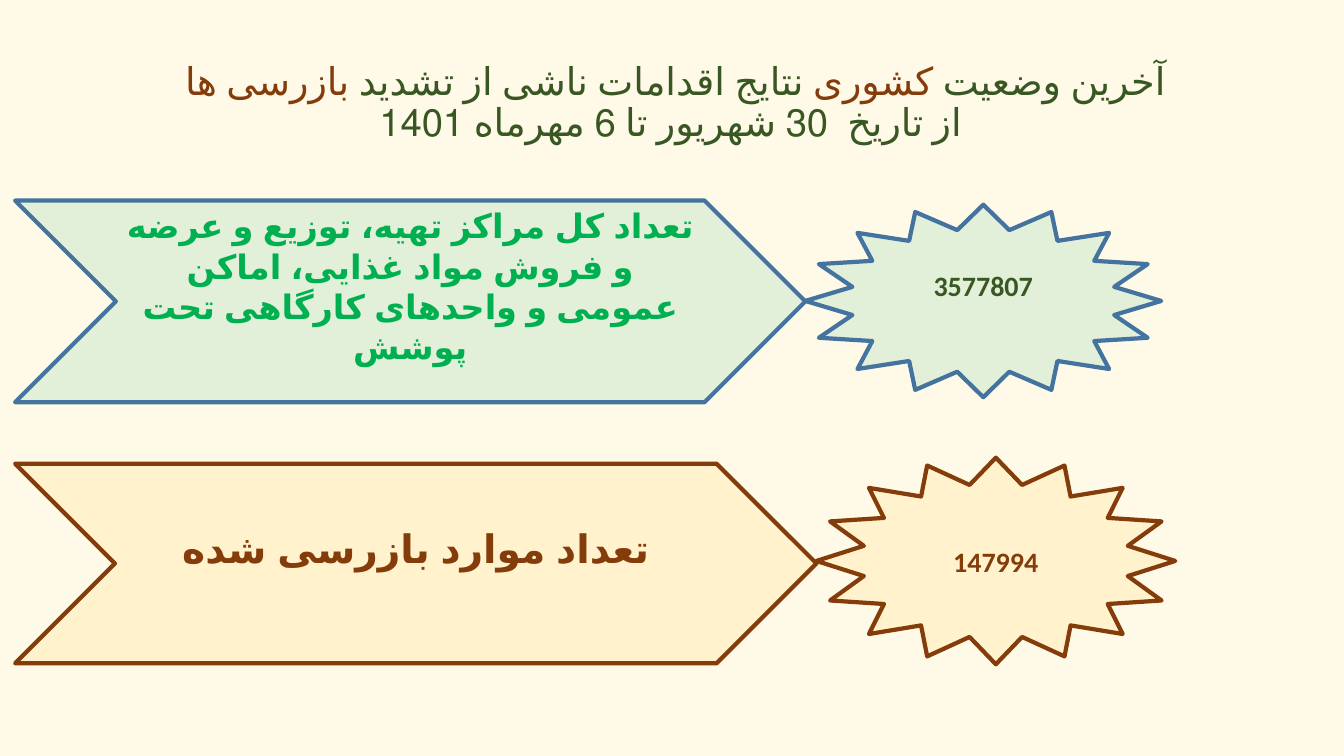
"""Build a slide with two inspection totals, each a chevron leading to a star."""
from pptx import Presentation
from pptx.dml.color import RGBColor
from pptx.enum import lang, shapes, text
from pptx.util import Pt

CREAM = RGBColor(0xFF, 0xF9, 0xE7)
PALE_GREEN = RGBColor(0xE2, 0xF0, 0xD9)
PALE_YELLOW = RGBColor(0xFF, 0xF2, 0xCC)
BLUE = RGBColor(0x43, 0x73, 0x9E)
GREEN = RGBColor(0x00, 0xB0, 0x50)
DARK_GREEN = RGBColor(0x38, 0x57, 0x23)
BROWN = RGBColor(0x84, 0x3C, 0x0B)

TITLE_LINES = [
    [("آخرین وضعیت ", DARK_GREEN), ("کشوری", BROWN),
     (" نتایج اقدامات ناشی از تشدید ", DARK_GREEN), ("بازرسی ها", BROWN)],
    [(" از تاریخ  30 شهریور تا 6 مهرماه 1401", DARK_GREEN)],
]
TITLE_BOX = (36.7, 41, 891.4, 81.4)
LEFT = 10.8
INSET, RAISED = 3.6, 25.6

ROWS = [
    {"fill": PALE_GREEN, "line": BLUE,
     "label": "تعداد کل مراکز تهیه، توزیع و عرضه و فروش مواد غذایی، اماکن عمومی و واحدهای کارگاهی تحت پوشش",
     "label_font": (24, GREEN), "label_box": (143.3, 564.5, 144), "label_bottom": RAISED,
     "total": "3577807", "total_font": (20, DARK_GREEN),
     "total_box": (146.2, 254.2, 137.5), "total_bottom": RAISED},
    {"fill": PALE_YELLOW, "line": BROWN,
     "label": "تعداد موارد بازرسی شده",
     "label_font": (28, BROWN), "label_box": (331.2, 572.4, 142.6), "label_bottom": RAISED,
     "total": "147994", "total_font": (20, BROWN),
     "total_box": (326.9, 256.3, 147.6), "total_bottom": INSET},
]


def format_font(font, size, color, bold):
    """Apply the slide's font and language with a size, colour and weight."""
    settings = {"name": "Calibri", "size": Pt(size), "bold": bold,
                "language_id": lang.MSO_LANGUAGE_ID.FARSI}
    for name, value in settings.items():
        setattr(font, name, value)
    font.color.rgb = color


def add_title(slide):
    """Fill the title placeholder with its coloured lines."""
    title = slide.shapes.title
    for name, value in zip(("left", "top", "width", "height"), TITLE_BOX):
        setattr(title, name, Pt(value))
    frame = title.text_frame
    settings = {"word_wrap": True, "auto_size": text.MSO_AUTO_SIZE.NONE,
                "vertical_anchor": text.MSO_ANCHOR.TOP}
    for name, value in settings.items():
        setattr(frame, name, value)
    paragraph = frame.paragraphs[0]
    paragraph.alignment = text.PP_ALIGN.CENTER
    paragraph.line_spacing = 0.9
    paragraph._p.get_or_add_pPr().set("rtl", "1")
    for index, line in enumerate(TITLE_LINES):
        if index:
            paragraph.add_line_break()
        for words, color in line:
            run = paragraph.add_run()
            run.text = words
            format_font(run.font, 27.3, color, False)


def add_part(slide, kind, left, row, part):
    """Draw one shape of a row and return its right edge in points."""
    top, width, height = row[part + "_box"]
    shape = slide.shapes.add_shape(kind, Pt(left), Pt(top), Pt(width), Pt(height))
    shape.shadow.inherit = False
    shape.fill.solid()
    shape.fill.fore_color.rgb = row["fill"]
    shape.line.color.rgb = row["line"]
    shape.line.width = Pt(3)
    frame = shape.text_frame
    settings = {"word_wrap": True, "vertical_anchor": text.MSO_ANCHOR.MIDDLE,
                "margin_bottom": Pt(row[part + "_bottom"])}
    for name, value in settings.items():
        setattr(frame, name, value)
    paragraph = frame.paragraphs[0]
    paragraph.alignment = text.PP_ALIGN.CENTER
    run = paragraph.add_run()
    run.text = row[part]
    format_font(run.font, *row[part + "_font"], True)
    return left + width


def main():
    """Assemble and save the slide."""
    presentation = Presentation()
    presentation.slide_width, presentation.slide_height = Pt(960), Pt(540)
    slide = presentation.slides.add_slide(presentation.slide_layouts[5])
    slide.background.fill.solid()
    slide.background.fill.fore_color.rgb = CREAM
    for row in ROWS:
        tip = add_part(slide, shapes.MSO_SHAPE.CHEVRON, LEFT, row, "label")
        add_part(slide, shapes.MSO_SHAPE.STAR_16_POINT, tip, row, "total")
    add_title(slide)
    presentation.save("out.pptx")


if __name__ == "__main__":
    main()
